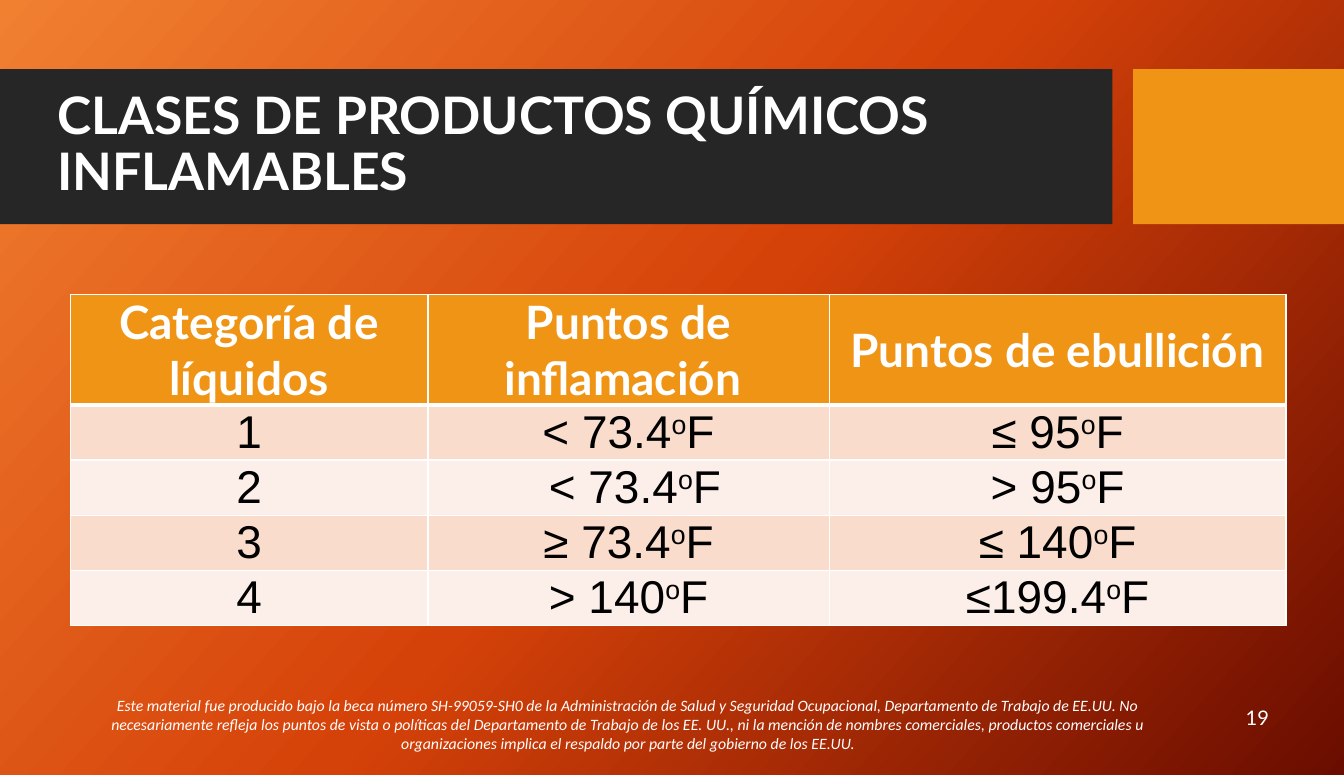
import pptx
import pptx.dml.color
import pptx.enum.shapes
import pptx.enum.text
import pptx.oxml
import pptx.oxml.ns
import pptx.util
from pptx.util import Inches

COLORS = {
    "light": "F18031", "middle": "D54209", "deep": "6A0D00",
    "bar": "262626", "accent": "F09415", "white": "FFFFFF",
    "black": "000000", "band_dark": "F9DCCC", "band_light": "FCEEE8",
}
GRADIENT = {0: "light", 50: "middle", 100: "deep"}
GRADIENT_ANGLE = 42

CENTER = pptx.enum.text.PP_ALIGN.CENTER
MIDDLE = pptx.enum.text.MSO_ANCHOR.MIDDLE

TITLE = "CLASES DE PRODUCTOS QUÍMICOS INFLAMABLES"
DISCLAIMER = (
    "Este material fue producido bajo la beca número SH-99059-SH0 de la "
    "Administración de Salud y Seguridad Ocupacional, Departamento de Trabajo "
    "de EE.UU. No necesariamente refleja los puntos de vista o políticas del "
    "Departamento de Trabajo de los EE. UU., ni la mención de nombres "
    "comerciales, productos comerciales u organizaciones implica el respaldo "
    "por parte del gobierno de los EE.UU."
)

# A caret marks the raised degree sign
COLUMN_WIDTHS = [3.46, 3.88, 4.42]
ROW_HEIGHT = 0.41
ROWS = [
    ["Categoría de líquidos", "Puntos de inflamación ", "Puntos de ebullición"],
    ["1", " < 73.4^o^F ", "≤ 95^o^F"],
    ["2", " < 73.4^o^F", "> 95^o^F"],
    ["3", "≥ 73.4^o^F", "≤ 140^o^F"],
    ["4", "> 140^o^F", "≤199.4^o^F"],
]

HEADER_FONT = {"name": "Lato", "size": 32, "bold": True, "color": "white"}
BODY_FONT = {"name": "Arial", "size": 32, "bold": False, "color": "black"}


def rgb(name):
    return pptx.dml.color.RGBColor.from_string(COLORS[name])


def set_values(target, values):
    for name, value in values.items():
        setattr(target, name, value)


def style_font(font, style):
    values = dict(style)
    font.color.rgb = rgb(values.pop("color"))
    values["size"] = pptx.util.Pt(values["size"])
    set_values(font, values)


def paint_background(page):
    fill = page.background.fill
    fill.gradient()
    # The angle is counted counterclockwise
    fill.gradient_angle = 360 - GRADIENT_ANGLE
    stops = page.background._cSld.find(".//" + pptx.oxml.ns.qn("a:gsLst"))
    for stop in list(stops):
        stops.remove(stop)
    for position, name in GRADIENT.items():
        stops.append(pptx.oxml.parse_xml(
            f'<a:gs {pptx.oxml.ns.nsdecls("a")} pos="{position * 1000}">'
            f'<a:srgbClr val="{COLORS[name]}"/></a:gs>'))


def add_block(page, left, width, color):
    block = page.shapes.add_shape(
        pptx.enum.shapes.MSO_SHAPE.RECTANGLE,
        Inches(left), Inches(0.67), Inches(width), Inches(1.5))
    block.shadow.inherit = False
    block.fill.solid()
    block.fill.fore_color.rgb = rgb(color)
    block.line.fill.background()


def add_text(page, text, area, style, frame_format=None, para_format=None):
    box = page.shapes.add_textbox(*(Inches(length) for length in area))
    frame = box.text_frame
    frame.word_wrap = True
    set_values(frame, frame_format or {})
    para = frame.paragraphs[0]
    set_values(para, para_format or {})
    span = para.add_run()
    span.text = text
    style_font(span.font, style)


def add_borders(cell, widths):
    properties = cell._tc.get_or_add_tcPr()
    for side, width in widths.items():
        properties.append(pptx.oxml.parse_xml(
            f'<a:ln{side} {pptx.oxml.ns.nsdecls("a")} w="{pptx.util.Pt(width)}">'
            f'<a:solidFill><a:srgbClr val="{COLORS["white"]}"/></a:solidFill>'
            f'</a:ln{side}>'))


def fill_cell(cell, text, color, style, borders):
    set_values(cell, {
        "vertical_anchor": MIDDLE, "margin_left": 0, "margin_right": 0,
        "margin_top": 0, "margin_bottom": 0,
    })
    add_borders(cell, borders)
    cell.fill.solid()
    cell.fill.fore_color.rgb = rgb(color)
    para = cell.text_frame.paragraphs[0]
    para.alignment = CENTER
    for index, part in enumerate(text.split("^")):
        span = para.add_run()
        span.text = part
        style_font(span.font, style)
        if index % 2:
            span._r.get_or_add_rPr().set("baseline", "30000")


def add_limits_table(page):
    table = page.shapes.add_table(
        len(ROWS), len(COLUMN_WIDTHS), Inches(0.68), Inches(2.85),
        Inches(sum(COLUMN_WIDTHS)), Inches(ROW_HEIGHT * len(ROWS))).table
    for column, width in zip(table.columns, COLUMN_WIDTHS):
        column.width = Inches(width)
    for row_index, texts in enumerate(ROWS):
        table.rows[row_index].height = Inches(ROW_HEIGHT)
        header = row_index == 0
        band = "band_dark" if row_index % 2 else "band_light"
        color = "accent" if header else band
        style = HEADER_FONT if header else BODY_FONT
        # A thick rule parts the header from the body
        borders = {"L": 1, "R": 1, "T": 3 if row_index == 1 else 1,
                   "B": 3 if header else 1}
        for column_index, text in enumerate(texts):
            fill_cell(table.cell(row_index, column_index), text, color, style,
                      borders)


def main():
    deck = pptx.Presentation()
    deck.slide_width, deck.slide_height = Inches(13), Inches(7.5)
    page = deck.slides.add_slide(deck.slide_layouts[6])
    paint_background(page)

    # Title band
    add_block(page, 0, 10.76, "bar")
    add_block(page, 10.96, 2.04, "accent")
    add_text(page, TITLE, (0.46, 0.82, 9.8, 1.18),
             {"name": "Lato", "size": 36, "bold": True, "color": "white"},
             {"vertical_anchor": MIDDLE}, {"line_spacing": 0.9})

    # Flash and boiling points
    add_limits_table(page)

    # Footer
    add_text(page, DISCLAIMER, (0.55, 6.68, 11.06, 0.66),
             {"name": "Calibri", "size": 11, "italic": True, "color": "white"},
             para_format={"alignment": CENTER})
    add_text(page, "19", (11.95, 6.78, 0.59, 0.52),
             {"name": "Lato", "size": 14, "color": "white"})

    deck.save("out.pptx")


if __name__ == "__main__":
    main()
